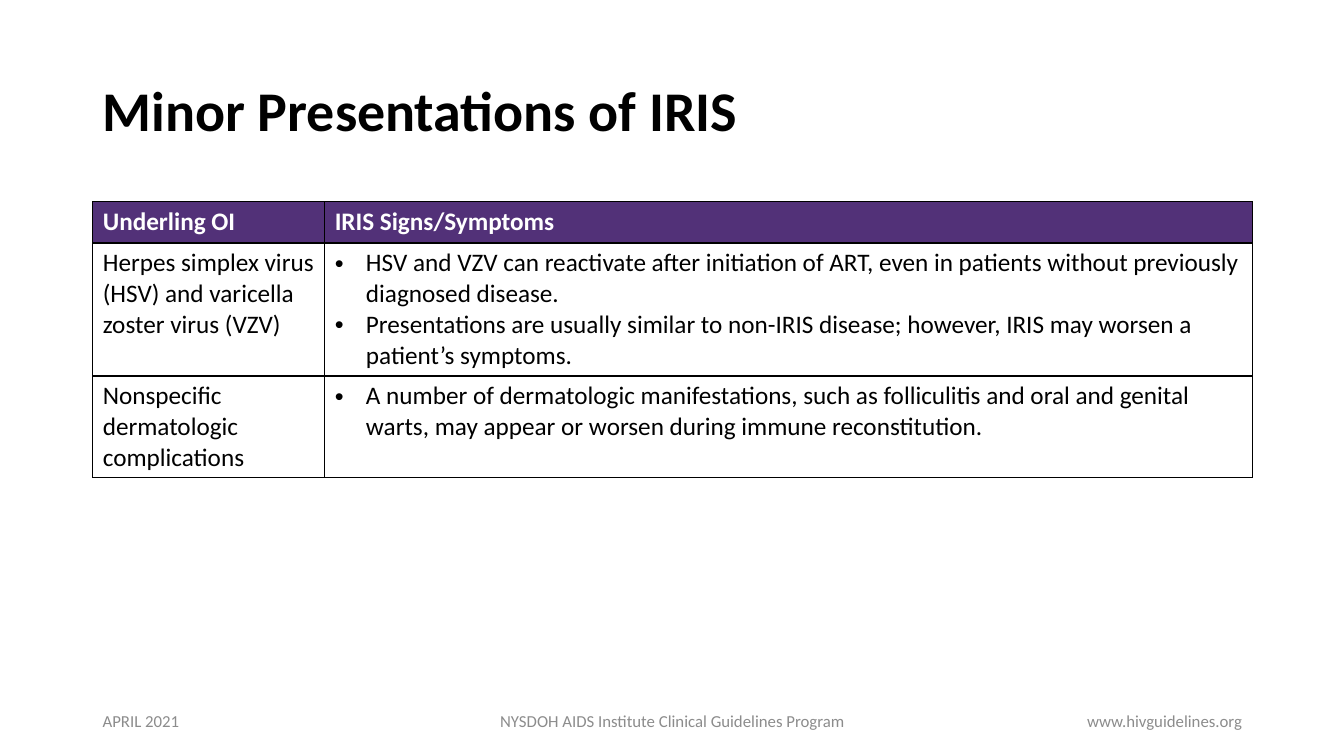
from dataclasses import dataclass

from lxml import etree
from pptx import Presentation
from pptx.dml.color import RGBColor
from pptx.enum.text import MSO_ANCHOR, PP_ALIGN
from pptx.oxml.ns import qn
from pptx.util import Inches, Pt

LEFT, MID, RIGHT = PP_ALIGN.LEFT, PP_ALIGN.CENTER, PP_ALIGN.RIGHT
CENTER = MSO_ANCHOR.MIDDLE


@dataclass(frozen=True)
class Theme:
    font: str = "Calibri"
    black: str = "000000"
    white: str = "FFFFFF"
    purple: str = "523178"
    gray: str = "8C8C8C"
    title: int = 40
    body: int = 18
    foot: int = 12


class Page:
    """Grid of 23 half-inch columns inside the margin, and tenth-inch rows."""

    margin, col, row = 0.92, 0.5, 0.1

    def __init__(self, deck, theme):
        self.theme = theme
        self.slide = deck.slides.add_slide(deck.slide_layouts[6])

    def wide(self, cols):
        return Inches(cols * self.col)

    def high(self, rows):
        return Inches(rows * self.row)

    def area(self, col, row, cols, rows):
        left = Inches(self.margin) + self.wide(col)
        return left, self.high(row), self.wide(cols), self.high(rows)

    def run(self, para, text, size, color, bold=False):
        run = para.add_run()
        run.text = text
        font = run.font
        font.name, font.size, font.bold = self.theme.font, Pt(size), bold
        font.color.rgb = RGBColor.from_string(color)

    def text(self, area, text, size, color, bold=False, align=LEFT, lead=1.0):
        frame = self.slide.shapes.add_textbox(*self.area(*area)).text_frame
        frame.word_wrap = True
        frame.vertical_anchor = CENTER
        para = frame.paragraphs[0]
        para.alignment, para.line_spacing = align, lead
        self.run(para, text, size, color, bold)

    def bullet(self, para):
        props = para._p.get_or_add_pPr()
        indent = Inches(0.31)
        props.set("marL", str(indent))
        props.set("indent", str(-indent))
        etree.SubElement(props, qn("a:buFont"), typeface="Arial")
        etree.SubElement(props, qn("a:buChar"), char="•")

    def border(self, cell):
        props = cell._tc.get_or_add_tcPr()
        for spot, side in enumerate(("L", "R", "T", "B")):
            line = etree.Element(qn(f"a:ln{side}"), w=str(Pt(1)))
            fill = etree.SubElement(line, qn("a:solidFill"))
            etree.SubElement(fill, qn("a:srgbClr"), val=self.theme.black)
            props.insert(spot, line)

    def cell(self, cell, items, head):
        look = self.theme
        cell.fill.solid()
        cell.fill.fore_color.rgb = RGBColor.from_string(
            look.purple if head else look.white)
        self.border(cell)
        # A list becomes bullets, a string a plain paragraph
        listed = isinstance(items, list)
        frame = cell.text_frame
        for num, item in enumerate(items if listed else [items]):
            para = frame.add_paragraph() if num else frame.paragraphs[0]
            if listed:
                self.bullet(para)
            self.run(para, item, look.body,
                     look.white if head else look.black, head)

    def table(self, col, row, cols, rows, data):
        area = self.area(col, row, sum(cols), sum(rows))
        grid = self.slide.shapes.add_table(
            len(rows), len(cols), *area).table
        grid.horz_banding = False
        for part, size in zip(grid.columns, cols):
            part.width = self.wide(size)
        for part, size in zip(grid.rows, rows):
            part.height = self.high(size)
        for r, line in enumerate(data):
            for c, items in enumerate(line):
                self.cell(grid.cell(r, c), items, r == 0)


DATA = [
    ("Underling OI", "IRIS Signs/Symptoms"),
    ("Herpes simplex virus (HSV) and varicella zoster virus (VZV)",
     ["HSV and VZV can reactivate after initiation of ART, even in patients "
      "without previously diagnosed disease.",
      "Presentations are usually similar to non-IRIS disease; however, IRIS "
      "may worsen a patient’s symptoms."]),
    ("Nonspecific dermatologic complications",
     ["A number of dermatologic manifestations, such as folliculitis and "
      "oral and genital warts, may appear or worsen during immune "
      "reconstitution."]),
]

# Start column, column count, wording, alignment
FOOT = [
    (0, 6, "APRIL 2021", LEFT),
    (7, 9, "NYSDOH AIDS Institute Clinical Guidelines Program", MID),
    (17, 6, "www.hivguidelines.org", RIGHT),
]


def main():
    deck = Presentation()
    deck.slide_width, deck.slide_height = Inches(13.33), Inches(7.5)
    look = Theme()
    page = Page(deck, look)

    # Title
    page.text((0, 4, 23, 14.5), "Minor Presentations of IRIS",
              look.title, look.black, bold=True, lead=0.9)

    # Table
    page.table(0, 20, (4.6, 18.4), (4.1, 13.2, 10.1), DATA)

    # Footer
    for col, cols, words, align in FOOT:
        page.text((col, 69.5, cols, 4), words, look.foot, look.gray,
                  align=align)

    deck.save("out.pptx")


if __name__ == "__main__":
    main()
